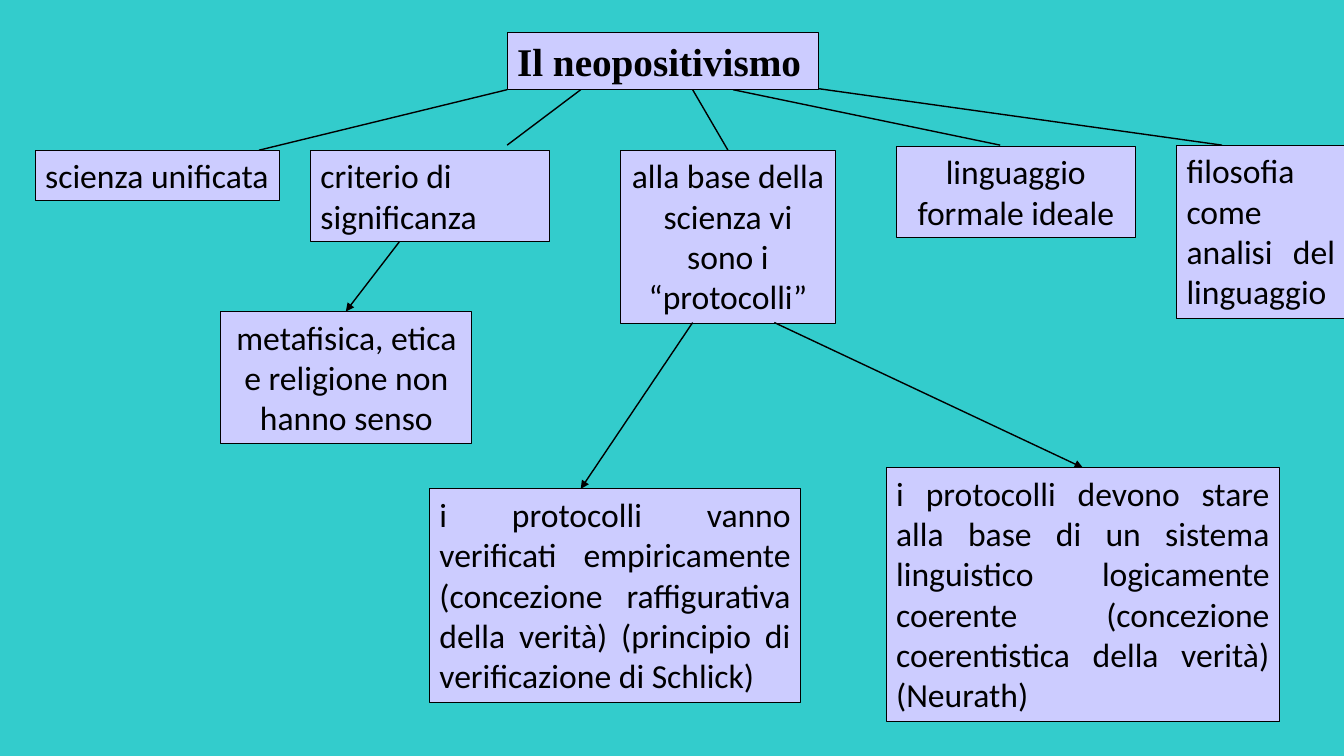
from lxml.etree import SubElement
from pptx import Presentation
from pptx.dml.color import RGBColor
from pptx.enum.shapes import MSO_CONNECTOR, MSO_SHAPE
from pptx.enum.text import MSO_ANCHOR, MSO_AUTO_SIZE, PP_ALIGN
from pptx.oxml.ns import qn
from pptx.util import Inches, Pt

COLORS = {"background": "33CCCC", "box": "CCCCFF", "ink": "000000"}
LEFT, CENTER, JUSTIFY = PP_ALIGN.LEFT, PP_ALIGN.CENTER, PP_ALIGN.JUSTIFY

# left, top, width, height, alignment, text
CONCEPTS = [
    (0.35, 1.49, 2.42, 0.5, LEFT, "scienza unificata"),
    (2.19, 3.09, 2.49, 1.31, CENTER, "metafisica, etica e religione non hanno senso"),
    (3.08, 1.49, 2.37, 0.91, LEFT, "criterio di significanza"),
    (8.89, 1.45, 2.37, 0.91, CENTER, "linguaggio formale ideale"),
    (11.67, 1.44, 1.67, 1.72, JUSTIFY, "filosofia come analisi del linguaggio"),
    (6.15, 1.49, 2.14, 1.72, CENTER, "alla base della scienza vi sono i “protocolli”"),
    (4.26, 4.85, 3.68, 2.12, JUSTIFY,
     "i protocolli vanno verificati empiricamente (concezione raffigurativa "
     "della verità) (principio di verificazione di Schlick)"),
    (8.79, 4.64, 3.9, 2.52, JUSTIFY,
     "i protocolli devono stare alla base di un sistema linguistico logicamente "
     "coerente (concezione coerentistica della verità) (Neurath)"),
]

# start x, start y, end x, end y
CONSEQUENCES = [
    (3.96, 2.4, 3.43, 3.09),
    (6.87, 3.2, 5.76, 4.85),
    (7.68, 3.2, 10.74, 4.64),
]
BRANCHES = [
    (5.03, 0.89, 2.57, 1.49),
    (5.76, 0.89, 5.03, 1.44),
    (6.87, 0.89, 7.22, 1.49),
    (7.27, 0.89, 9.92, 1.44),
    (8.12, 0.88, 12.12, 1.44),
]


class ConceptMap:
    def __init__(self, s):
        self.s = s
        fill = s.background.fill
        fill.solid()
        fill.fore_color.rgb = self.color("background")

    def color(self, name):
        return RGBColor.from_string(COLORS[name])

    def box(self, x, y, w, h, align, text, font="Calibri", size=24, bold=False):
        sp = self.s.shapes.add_shape(
            MSO_SHAPE.RECTANGLE, Inches(x), Inches(y), Inches(w), Inches(h))
        sp.shadow.inherit = False
        sp.fill.solid()
        sp.fill.fore_color.rgb = self.color("box")
        sp.line.color.rgb = self.color("ink")
        sp.line.width = Pt(0.75)
        tf = sp.text_frame
        tf.word_wrap = True
        tf.auto_size = MSO_AUTO_SIZE.SHAPE_TO_FIT_TEXT
        tf.vertical_anchor = MSO_ANCHOR.TOP
        tf.text = text
        p = tf.paragraphs[0]
        p.alignment = align
        r = p.runs[0]
        r.font.name = font
        r.font.size = Pt(size)
        r.font.bold = bold
        r.font.color.rgb = self.color("ink")

    def line(self, x1, y1, x2, y2, arrow=False):
        c = self.s.shapes.add_connector(
            MSO_CONNECTOR.STRAIGHT, Inches(x1), Inches(y1), Inches(x2), Inches(y2))
        c.line.color.rgb = self.color("ink")
        c.line.width = Pt(1)
        if arrow:
            SubElement(c.line._get_or_add_ln(), qn("a:tailEnd"), type="triangle")
        SubElement(c._element.spPr, qn("a:effectLst"))


def main():
    prs = Presentation()
    prs.slide_width, prs.slide_height = Inches(13.33), Inches(7.5)
    concept_map = ConceptMap(prs.slides.add_slide(prs.slide_layouts[6]))

    concept_map.box(5.03, 0.32, 3.09, 0.57, LEFT, "Il neopositivismo",
                    font="Times New Roman", size=28, bold=True)
    for concept in CONCEPTS:
        concept_map.box(*concept)
    for ends in CONSEQUENCES:
        concept_map.line(*ends, arrow=True)
    for ends in BRANCHES:
        concept_map.line(*ends)

    prs.save("out.pptx")


if __name__ == "__main__":
    main()
